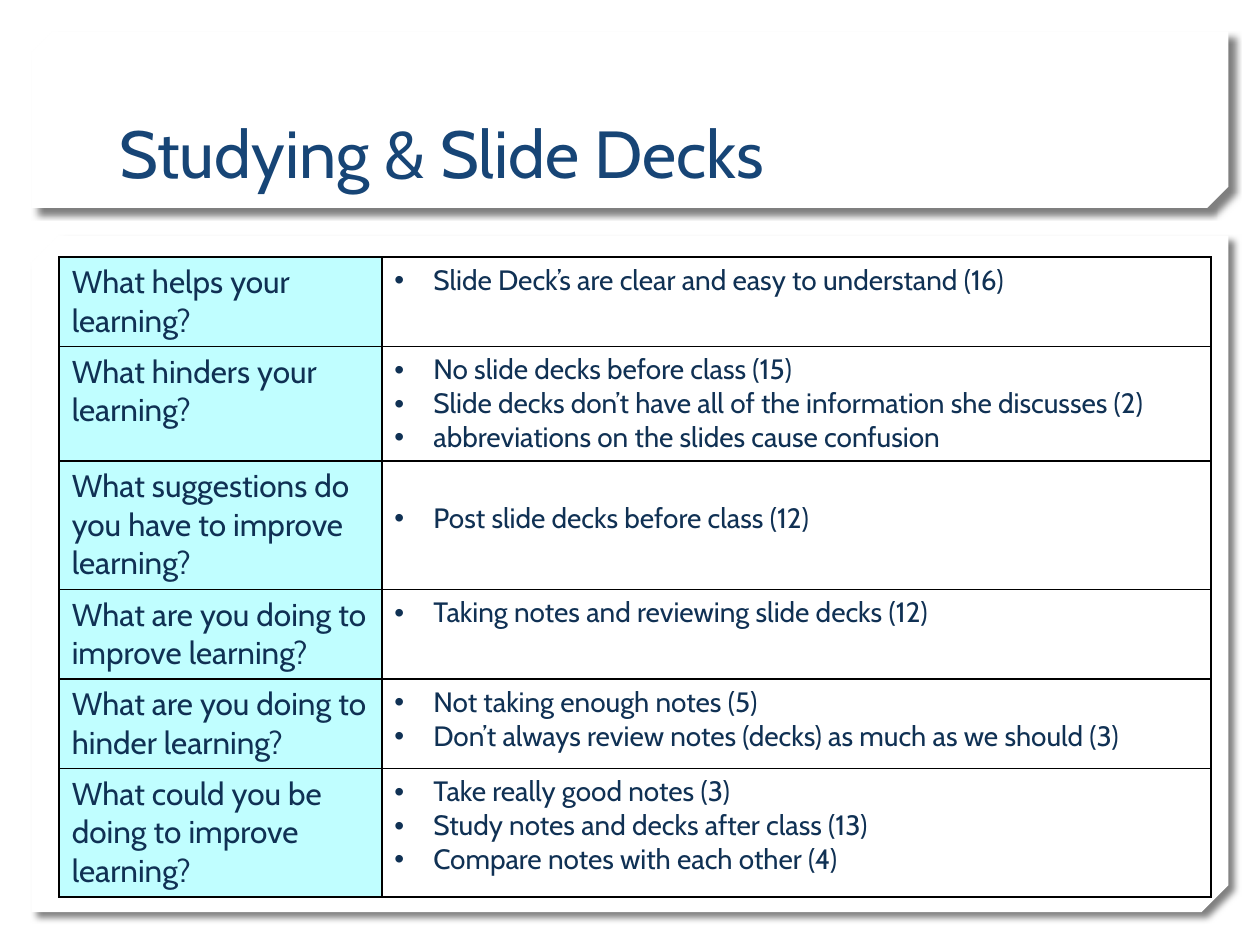
from dataclasses import dataclass

from lxml.etree import SubElement
from pptx import Presentation
from pptx.dml.color import RGBColor as RGB
from pptx.enum.shapes import MSO_SHAPE as SHAPE
from pptx.enum.text import MSO_ANCHOR as ANCHOR
from pptx.oxml.ns import qn
from pptx.util import Inches, Pt


@dataclass(frozen=True)
class Theme:
    font: str = "Cabin"
    title: str = "174576"
    text: str = "103154"
    question: str = "C0FEFF"
    panel: str = "FFFFFF"
    line: str = "000000"
    title_size: int = 38
    question_size: int = 18
    answer_size: int = 16


THEME = Theme()
WIDTH, HEIGHT = 10, 7.5
MARGIN = WIDTH / 40
SNIP = 0.04
BULLET_INDENT = 0.31
COLUMNS = (2.56, 6.58)
ROW_HEIGHT = {2: 0.71, 3: 1.02}  # by lines of question text
FIRST_LINE_GAP = 0.27

# question, lines it takes, answers
FEEDBACK = [
    ("What helps your learning?", 2,
     ["Slide Deck’s are clear and easy to understand (16)"]),
    ("What hinders your learning?", 2,
     ["No slide decks before class (15)",
      "Slide decks don’t have all of the information she discusses (2)",
      "abbreviations on the slides cause confusion"]),
    ("What suggestions do you have to improve learning?", 3,
     ["Post slide decks before class (12)"]),
    ("What are you doing to improve learning?", 2,
     ["Taking notes and reviewing slide decks (12)"]),
    ("What are you doing to hinder learning?", 2,
     ["Not taking enough notes (5)",
      "Don’t always review notes (decks) as much as we should (3)"]),
    ("What could you be doing to improve learning?", 3,
     ["Take really good notes (3)",
      "Study notes and decks after class (13)",
      "Compare notes with each other (4)"]),
]
LOWERED_ROW = 2
TALL_ROW = 1
TALL_HEIGHT = 0.91


def add_run(p, text, size, color):
    r = p.add_run()
    r.text = text
    r.font.name = THEME.font
    r.font.size = Pt(size)
    r.font.color.rgb = RGB.from_string(color)


def add_color(parent, color):
    fill = SubElement(parent, qn("a:solidFill"))
    return SubElement(fill, qn("a:srgbClr"), val=color)


def add_panel(s, top, height, snip):
    """White card with a snipped lower right corner and a soft shadow."""
    sp = s.shapes.add_shape(SHAPE.SNIP_2_DIAG_RECTANGLE, Inches(MARGIN), Inches(top),
                            Inches(WIDTH - 2 * MARGIN), Inches(height))
    sp.adjustments[0], sp.adjustments[1] = snip, 0
    sp.fill.solid()
    sp.fill.fore_color.rgb = RGB.from_string(THEME.panel)
    sp.line.fill.background()
    sp.shadow.inherit = False
    effects = sp._element.spPr.find(qn("a:effectLst"))
    shadow = SubElement(effects, qn("a:outerShdw"), blurRad=str(Pt(4)),
                        dist=str(Pt(5)), dir=str(45 * 60000), algn="tl",
                        rotWithShape="0")
    color = SubElement(shadow, qn("a:srgbClr"), val=THEME.line)
    SubElement(color, qn("a:alpha"), val="50000")


def add_title(s, text):
    box = s.shapes.add_textbox(Inches(0.85), Inches(0.32), Inches(8.29), Inches(1.25))
    tf = box.text_frame
    tf.word_wrap = True
    tf.vertical_anchor = ANCHOR.BOTTOM
    add_run(tf.paragraphs[0], text, THEME.title_size, THEME.title)


def add_bullet(p):
    pPr = p._p.get_or_add_pPr()
    pPr.set("marL", str(Inches(BULLET_INDENT)))
    pPr.set("indent", str(-Inches(BULLET_INDENT)))
    SubElement(pPr, qn("a:buFont"), typeface="Arial")
    SubElement(pPr, qn("a:buChar"), char="•")


def add_borders(cell):
    tcPr = cell._tc.get_or_add_tcPr()
    for i, side in enumerate(("lnL", "lnR", "lnT", "lnB")):
        ln = tcPr.makeelement(qn(f"a:{side}"), {"w": str(Pt(1))})
        add_color(ln, THEME.line)
        tcPr.insert(i, ln)


def fill_question(cell, text):
    cell.fill.solid()
    cell.fill.fore_color.rgb = RGB.from_string(THEME.question)
    add_run(cell.text_frame.paragraphs[0], text, THEME.question_size, THEME.text)


def fill_answers(cell, answers):
    cell.fill.background()
    tf = cell.text_frame
    for i, answer in enumerate(answers):
        p = tf.add_paragraph() if i else tf.paragraphs[0]
        add_bullet(p)
        add_run(p, answer, THEME.answer_size, THEME.text)


def add_feedback_table(s, left, top):
    heights = [ROW_HEIGHT[lines] for _, lines, _ in FEEDBACK]
    heights[TALL_ROW] = TALL_HEIGHT
    frame = s.shapes.add_table(len(FEEDBACK), len(COLUMNS), Inches(left), Inches(top),
                               Inches(sum(COLUMNS)), Inches(sum(heights)))
    table = frame.table
    table.first_row = table.horz_banding = False
    for column, width in zip(table.columns, COLUMNS):
        column.width = Inches(width)
    for row, height, (question, _, answers) in zip(table.rows, heights, FEEDBACK):
        row.height = Inches(height)
        fill_question(row.cells[0], question)
        fill_answers(row.cells[1], answers)
        for cell in row.cells:
            add_borders(cell)
    lowered = table.cell(LOWERED_ROW, 1)
    lowered.margin_top = Inches(0.05 + FIRST_LINE_GAP)


def main():
    prs = Presentation()
    prs.slide_width, prs.slide_height = Inches(WIDTH), Inches(HEIGHT)
    s = prs.slides.add_slide(prs.slide_layouts[6])
    add_panel(s, top=1.87, height=5.37, snip=SNIP)
    add_panel(s, top=MARGIN, height=1.4, snip=0.12)
    add_title(s, "Studying & Slide Decks")
    add_feedback_table(s, left=0.47, top=2.04)
    prs.save("out.pptx")


if __name__ == "__main__":
    main()
